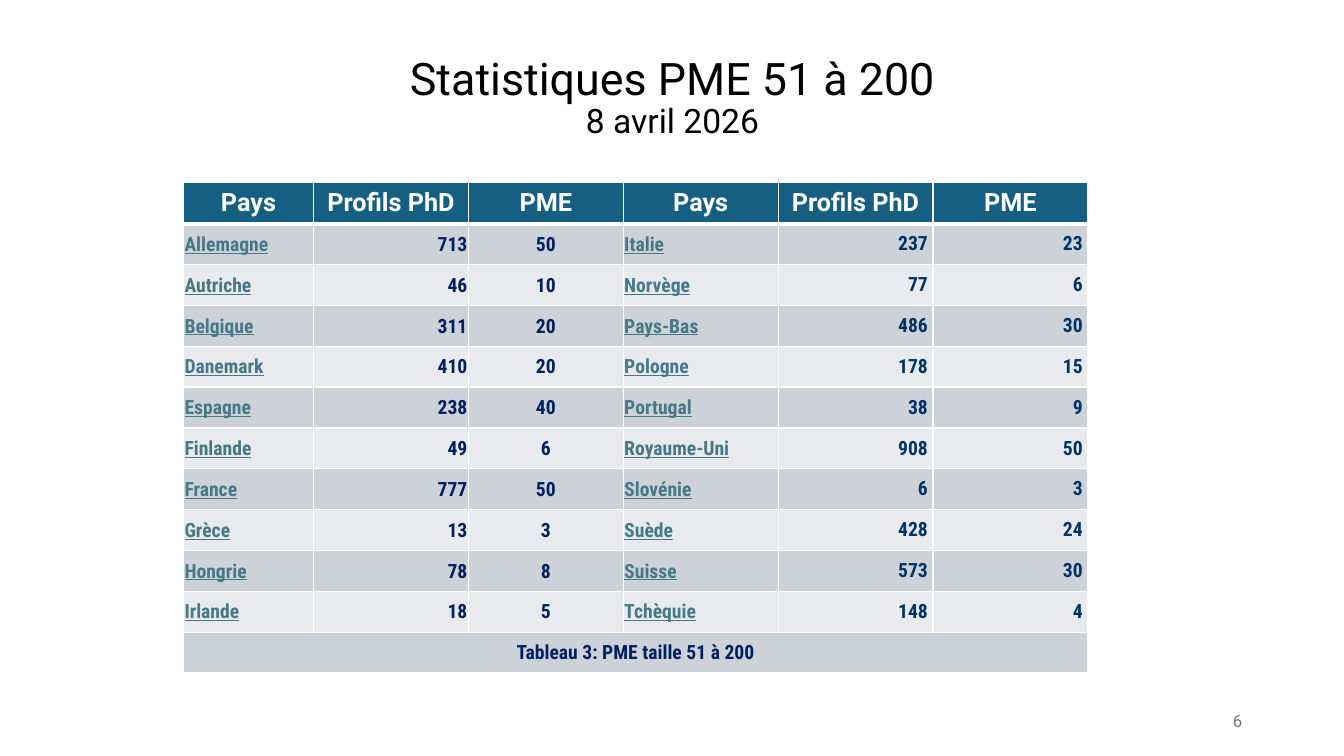
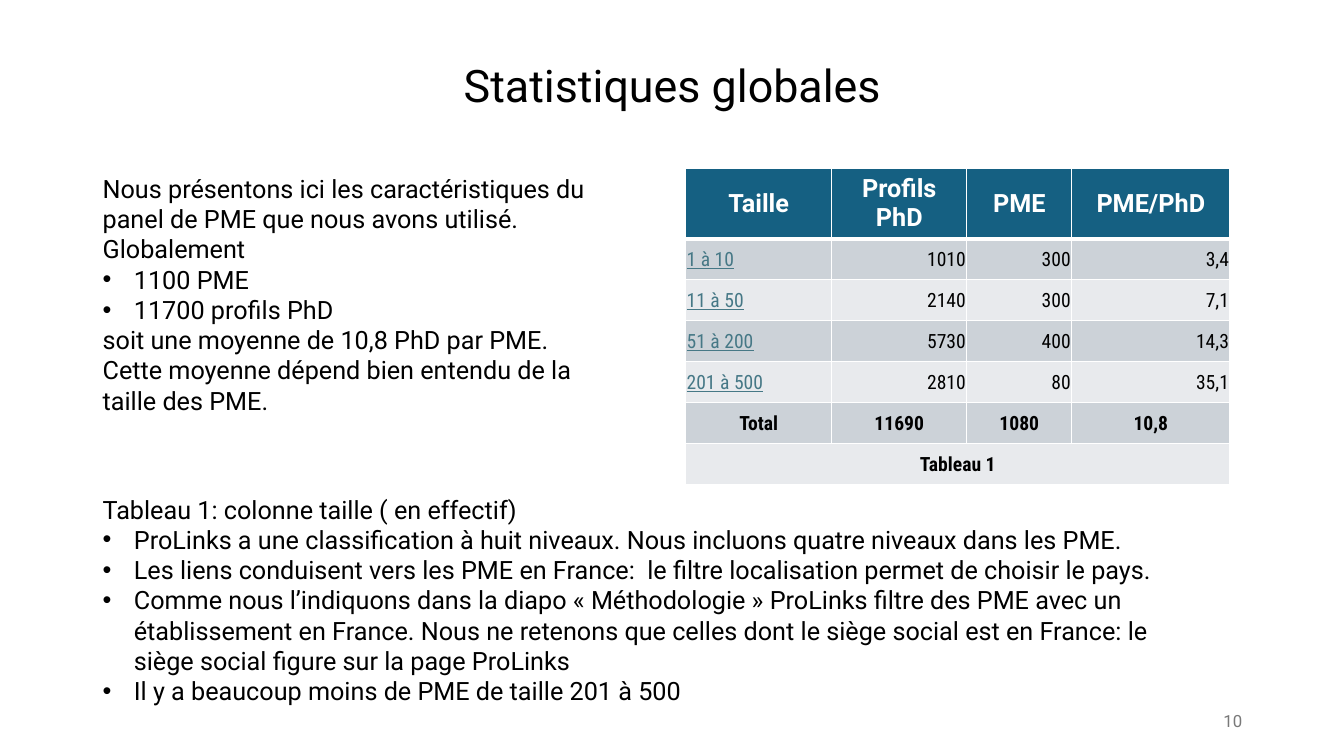
from collections import namedtuple

from lxml.etree import SubElement
from pptx import Presentation
from pptx.dml.color import RGBColor
from pptx.enum.text import MSO_ANCHOR, PP_ALIGN
from pptx.oxml.ns import qn
from pptx.util import Emu, Pt

PX = 9144
SANS, SLIM = "Roboto", "Roboto Condensed"
BLACK = RGBColor(0x00, 0x00, 0x00)
WHITE = RGBColor(0xFF, 0xFF, 0xFF)
GRAY = RGBColor(0x79, 0x79, 0x79)
TEAL = RGBColor(0x15, 0x60, 0x82)
LINK = RGBColor(0x46, 0x78, 0x86)
NAVY = RGBColor(0x00, 0x20, 0x60)
BLUE = RGBColor(0x00, 0x33, 0x66)
BANDS = RGBColor(0xCC, 0xD2, 0xD8), RGBColor(0xE8, 0xEA, 0xED)
LEFT, MID, RIGHT = PP_ALIGN.LEFT, PP_ALIGN.CENTER, PP_ALIGN.RIGHT

Look = namedtuple("Look", "face size color align bold pad", defaults=(LEFT, False, (1, 1, 1, 0)))
TITLE = Look(SANS, 32, BLACK, MID)
DATE = TITLE._replace(size=24)
BODY = Look(SANS, 18, BLACK)
PAGE = Look(SANS, 12, GRAY, RIGHT)
HEAD = Look(SANS, 18, WHITE, MID, True, (10, 5, 10, 5))
NAME = Look(SLIM, 14, LINK)
DATA = Look(SLIM, 14, BLACK, RIGHT)
SUM = DATA._replace(align=MID, bold=True)

LANDS = [
    ("Allemagne", 713, 50, "Italie", 237, 23),
    ("Autriche", 46, 10, "Norvège", 77, 6),
    ("Belgique", 311, 20, "Pays-Bas", 486, 30),
    ("Danemark", 410, 20, "Pologne", 178, 15),
    ("Espagne", 238, 40, "Portugal", 38, 9),
    ("Finlande", 49, 6, "Royaume-Uni", 908, 50),
    ("France", 777, 50, "Slovénie", 6, 3),
    ("Grèce", 13, 3, "Suède", 428, 24),
    ("Hongrie", 78, 8, "Suisse", 573, 30),
    ("Irlande", 18, 5, "Tchèquie", 148, 4),
]
SIZES = [
    ("1 à 10", "1010", "300", "3,4"),
    ("11 à 50", "2140", "300", "7,1"),
    ("51 à 200", "5730", "400", "14,3"),
    ("201 à 500", "2810", "80", "35,1"),
]
TOTAL = "Total", "11690", "1080", "10,8"
INTRO = [
    (False, "Nous présentons ici les caractéristiques du panel de PME que nous avons utilisé."),
    (False, "Globalement"),
    (True, "1100 PME"),
    (True, "11700 profils PhD"),
    (False, "soit une moyenne de 10,8 PhD par PME."),
    (False, "Cette moyenne dépend bien entendu de la taille des PME."),
]
NOTES = [
    (False, "Tableau 1: colonne taille ( en effectif)"),
    (True, "ProLinks a une classification à huit niveaux. Nous incluons quatre niveaux dans les PME."),
    (True, "Les liens conduisent vers les PME en France:  le filtre localisation permet de choisir le pays."),
    (True, "Comme nous l’indiquons dans la diapo « Méthodologie » ProLinks filtre des PME avec un "
           "établissement en France. Nous ne retenons que celles dont le siège social est en France: "
           "le siège social figure sur la page ProLinks"),
    (True, "Il y a beaucoup moins de PME de taille 201 à 500"),
]


def px(num):
    """Turn px into EMU."""
    return Emu(round(num * PX))


def add_run(para, text, look):
    """Add one styled run to a paragraph."""
    run = para.add_run()
    run.text = text
    font = run.font
    font.name, font.size, font.bold = look.face, Pt(look.size), look.bold
    font.color.rgb = look.color
    if look.color == LINK:
        font.underline = True


def add_dot(para):
    """Give a paragraph a hanging bullet."""
    props = para._p.get_or_add_pPr()
    props.set("marL", str(px(31)))
    props.set("indent", str(px(-31)))
    SubElement(props, qn("a:buFont")).set("typeface", "Arial")
    SubElement(props, qn("a:buChar")).set("char", "•")


def write(frame, lines, look):
    """Write (bullet, text) lines as paragraphs."""
    for row, (dot, text) in enumerate(lines):
        para = frame.add_paragraph() if row else frame.paragraphs[0]
        para.alignment = look.align
        if dot:
            add_dot(para)
        add_run(para, text, look)


def add_box(slide, box, anchor=MSO_ANCHOR.TOP):
    """Add a wrapping text box and return its frame."""
    frame = slide.shapes.add_textbox(*map(px, box)).text_frame
    frame.word_wrap = True
    frame.vertical_anchor = anchor
    return frame


def add_title(slide, box, title, date=None):
    """Place the title, with a date line if there is one."""
    para = add_box(slide, box, MSO_ANCHOR.MIDDLE).paragraphs[0]
    para.alignment, para.line_spacing = MID, 0.9
    add_run(para, title, TITLE)
    if date:
        para.add_line_break()
        add_run(para, date, DATE)


def add_page(slide, num):
    """Place the page number."""
    write(add_box(slide, (942, 695, 300, 40), MSO_ANCHOR.MIDDLE), [(False, num)], PAGE)


def add_edges(cell, base):
    """Draw white borders, with the given width at the bottom."""
    props = cell._tc.get_or_add_tcPr()
    for side, width in zip("LRTB", (1, 1, 1, base)):
        line = SubElement(props, qn(f"a:ln{side}"), w=str(Pt(width)))
        fill = SubElement(line, qn("a:solidFill"))
        SubElement(fill, qn("a:srgbClr"), val=str(WHITE))


def set_cell(cell, text, look, back, base=1):
    """Style one cell and write its text."""
    add_edges(cell, base)
    cell.fill.solid()
    cell.fill.fore_color.rgb = back
    cell.vertical_anchor = MSO_ANCHOR.MIDDLE
    cell.margin_left, cell.margin_top, cell.margin_right, cell.margin_bottom = map(px, look.pad)
    write(cell.text_frame, [(False, part) for part in str(text).split("\n")], look)


def add_grid(slide, box, cols, top, heads, rows, note):
    """Place a table: heads, banded rows of (values, looks), and a merged note."""
    high = (box[3] - top) / (len(rows) + 1)
    grid = slide.shapes.add_table(len(rows) + 2, len(cols), *map(px, box)).table
    for col, wide in zip(grid.columns, cols):
        col.width = px(wide)
    for num, row in enumerate(grid.rows):
        row.height = px(high if num else top)
    for col, text in enumerate(heads):
        set_cell(grid.cell(0, col), text, HEAD, TEAL, 3)
    for num, (vals, looks) in enumerate(rows):
        for col, (val, look) in enumerate(zip(vals, looks)):
            set_cell(grid.cell(num + 1, col), val, look, BANDS[num % 2])
    last = len(rows) + 1
    grid.cell(last, 0).merge(grid.cell(last, len(cols) - 1))
    set_cell(grid.cell(last, 0), *note, BANDS[len(rows) % 2])


def add_lands(slide):
    """Build the slide with figures by country."""
    add_title(slide, (92, 40, 1150, 116), "Statistiques PME 51 à 200", "8 avril 2026")
    wide, first = 897, 129
    cols = [first] + [(wide - first) / 5] * 5
    name = NAME._replace(bold=True)
    left = SUM._replace(color=NAVY)
    right = DATA._replace(color=BLUE, bold=True, pad=(5, 0, 5, 0))
    looks = name, left._replace(align=RIGHT), left, name, right, right
    add_grid(slide, (182, 181, wide, 487), cols, 41, ("Pays", "Profils PhD", "PME") * 2,
             [(row, looks) for row in LANDS], ("Tableau 3: PME taille 51 à 200", left))
    add_page(slide, "6")


def add_sums(slide):
    """Build the slide with figures by company size."""
    add_title(slide, (92, 40, 1150, 95), "Statistiques globales")
    looks = NAME, DATA, DATA, DATA
    rows = [(row, looks) for row in SIZES] + [(TOTAL, (SUM,) * 4)]
    add_grid(slide, (680, 167, 540, 311), (145, 134, 104, 157), 67,
             ("Taille", "Profils\nPhD", "PME", "PME/PhD"), rows, ("Tableau 1", SUM))
    add_page(slide, "10")
    write(add_box(slide, (92, 167, 507, 252)), INTRO, BODY)
    write(add_box(slide, (92, 485, 1067, 252)), NOTES, BODY)


def main():
    """Build and save the deck."""
    deck = Presentation()
    deck.slide_width, deck.slide_height = px(1333), px(750)
    for build in (add_lands, add_sums):
        build(deck.slides.add_slide(deck.slide_layouts[6]))
    deck.save("out.pptx")


if __name__ == "__main__":
    main()
